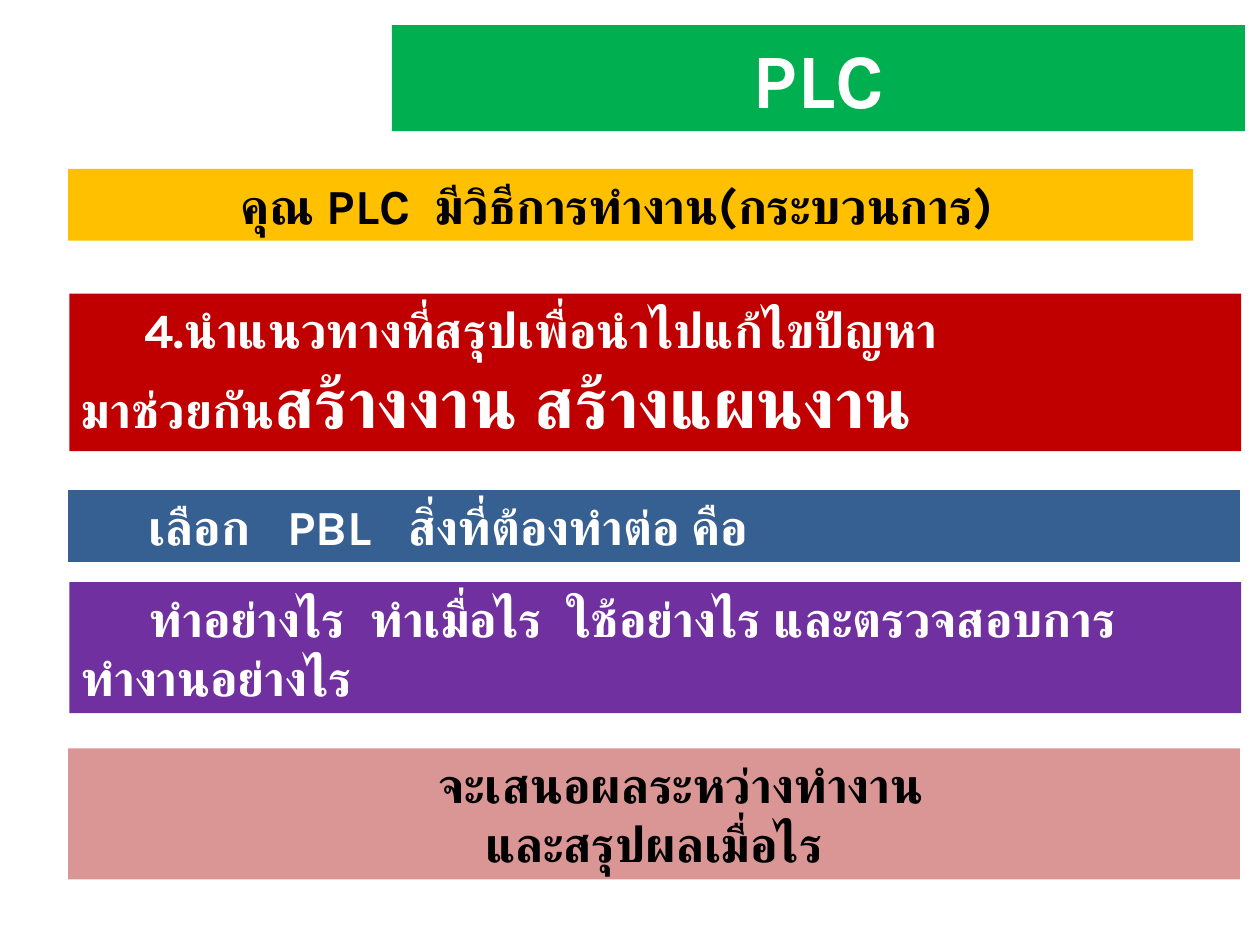
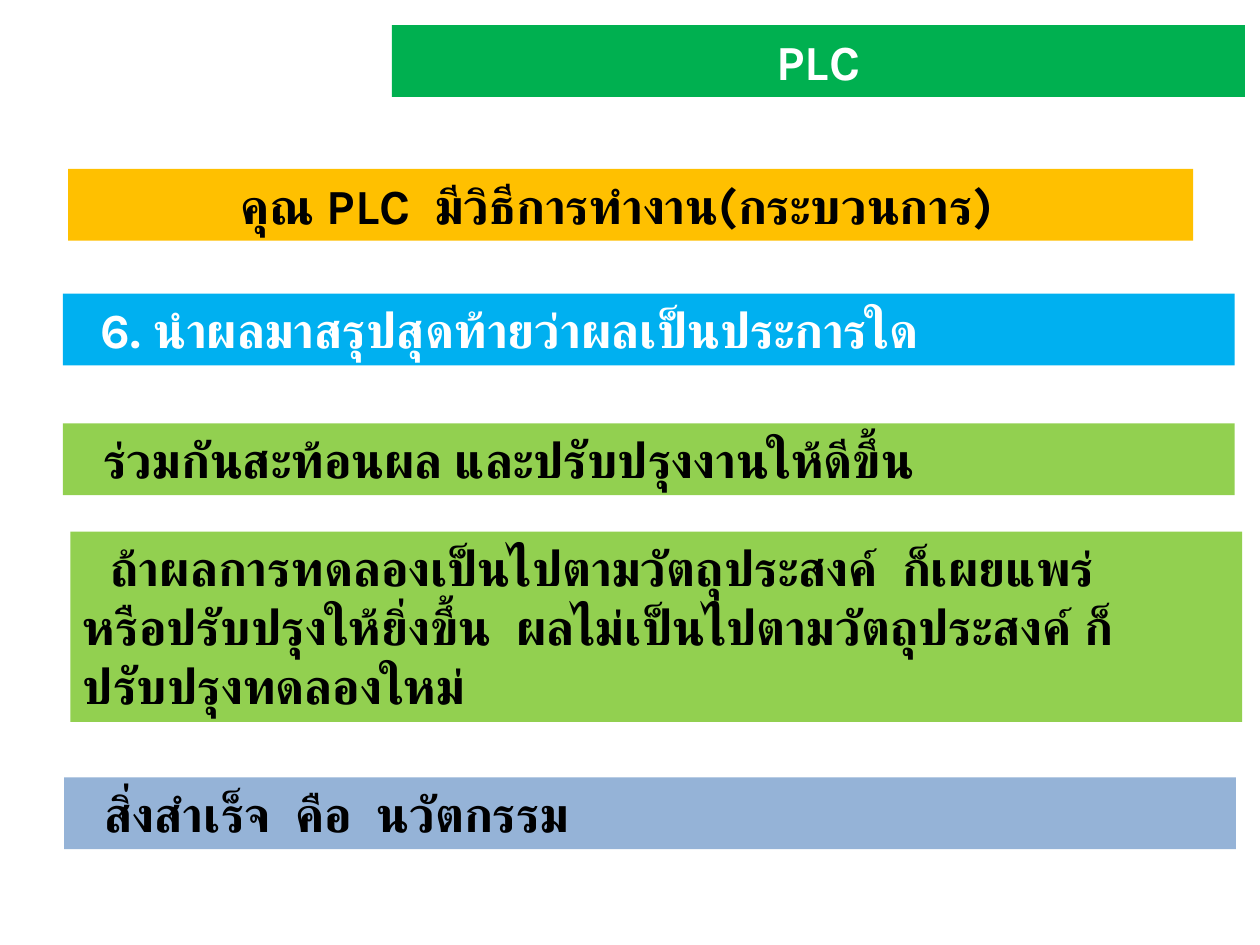
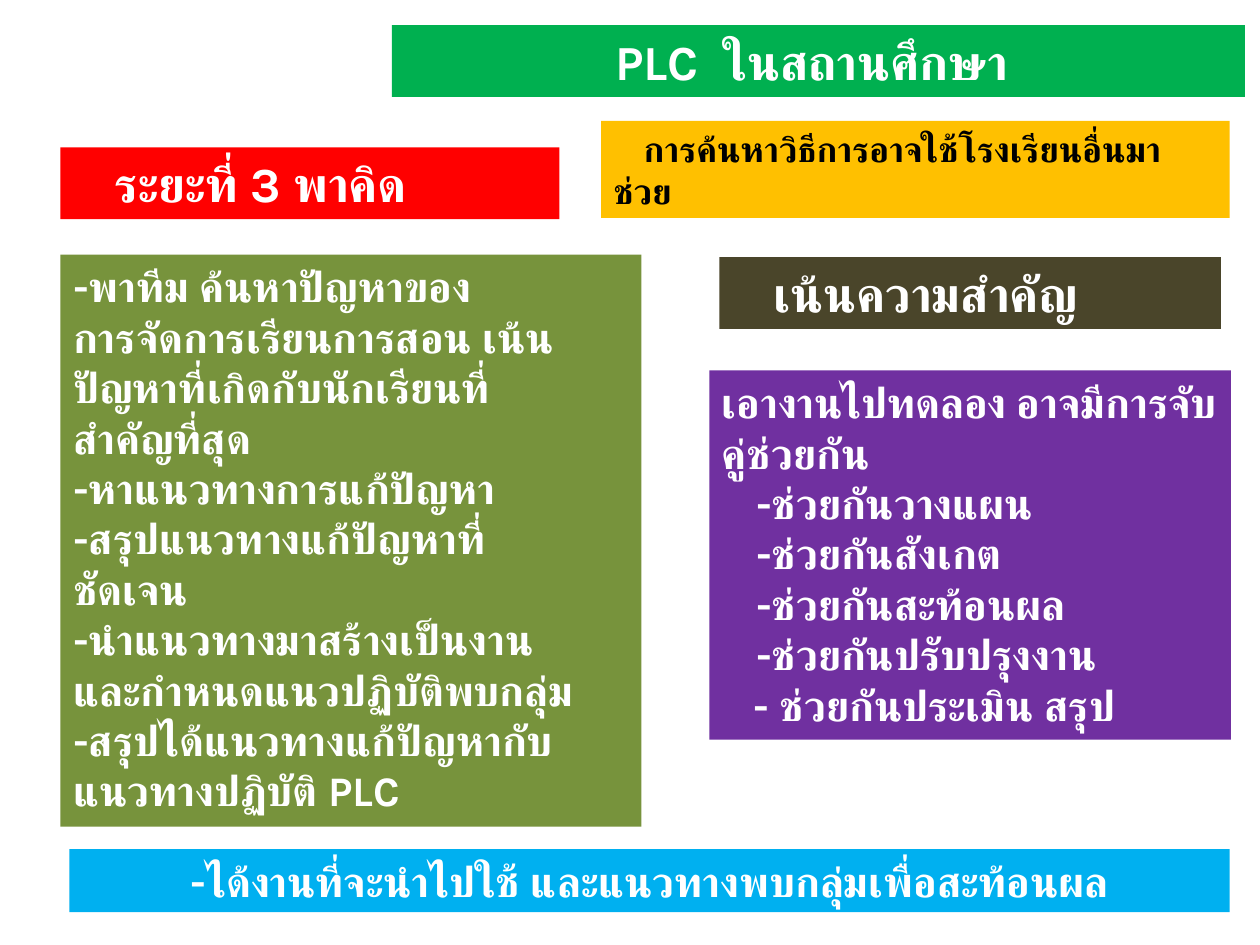
from dataclasses import dataclass

import pptx
import pptx.dml.color
import pptx.enum.lang
import pptx.enum.text
import pptx.util
from lxml import etree
from pptx.util import Inches

RGBColor = pptx.dml.color.RGBColor
WHITE = RGBColor(0xFF, 0xFF, 0xFF)
BLACK = RGBColor(0, 0, 0)
GREEN = RGBColor(0x00, 0xB0, 0x50)
AMBER = RGBColor(0xFF, 0xC0, 0x00)
DARK_RED = RGBColor(0xC0, 0x00, 0x00)
RED = RGBColor(0xFF, 0x00, 0x00)
NAVY = RGBColor(0x37, 0x60, 0x92)
PURPLE = RGBColor(0x70, 0x30, 0xA0)
PINK = RGBColor(0xD9, 0x96, 0x94)
SKY = RGBColor(0x00, 0xB0, 0xF0)
LIME = RGBColor(0x92, 0xD0, 0x50)
PALE_BLUE = RGBColor(0x95, 0xB3, 0xD7)
OLIVE = RGBColor(0x77, 0x93, 0x3C)
BROWN = RGBColor(0x4A, 0x45, 0x2A)

FONT = "Karla"
EMPHASIS_SIZE = 40
DRAWING = "{http://schemas.openxmlformats.org/drawingml/2006/main}"
TITLE_ONLY, TWO_CONTENT = 5, 3
FULL_WIDTH = 9.3
ONE_LINE, TWO_LINES = 0.57, 1.04


@dataclass
class Line:
    """A paragraph; distances are in inches, emphasis is a larger ending."""
    text: str
    indent: float = 0
    left: float = 0
    right: float = 0
    emphasis: str = ""


@dataclass
class Band:
    """A filled block of text; slot is the placeholder that holds it, if any."""
    place: tuple
    fill: RGBColor
    ink: RGBColor
    lines: list
    size: int = 28
    centred: bool = False
    slot: int = None


def title_band(text, height=ONE_LINE, size=28, right=0):
    return Band((3.11, 0.2, 6.77, height), GREEN, WHITE,
                [Line(text, right=right)], size, centred=True, slot=0)


QUESTION = Band((0.54, 1.34, 8.93, ONE_LINE), AMBER, BLACK,
                [Line("คุณ PLC  มีวิธีการทำงาน(กระบวนการ)", right=0.22)], centred=True)

SLIDES = [
    (TITLE_ONLY, [
        title_band("PLC", height=0.84, size=44),
        QUESTION,
        Band((0.55, 2.33, FULL_WIDTH, 1.25), DARK_RED, WHITE, [
            Line("4.นำแนวทางที่สรุปเพื่อนำไปแก้ไขปัญหา\vมาช่วยกัน", indent=0.5,
                 emphasis="สร้างงาน สร้างแผนงาน")]),
        Band((0.54, 3.89, FULL_WIDTH, ONE_LINE), NAVY, WHITE, [
            Line("เลือก   PBL   สิ่งที่ต้องทำต่อ คือ", indent=0.54)]),
        Band((0.55, 4.62, FULL_WIDTH, TWO_LINES), PURPLE, WHITE, [
            Line("ทำอย่างไร  ทำเมื่อไร  ใช้อย่างไร และตรวจสอบการทำงานอย่างไร", indent=0.54)]),
        Band((0.54, 5.94, FULL_WIDTH, TWO_LINES), PINK, BLACK, [
            Line("จะเสนอผลระหว่างทำงาน", left=0.43),
            Line("และสรุปผลเมื่อไร")], centred=True),
    ]),
    (TITLE_ONLY, [
        title_band("PLC"),
        QUESTION,
        Band((0.5, 2.33, FULL_WIDTH, ONE_LINE), SKY, WHITE, [
            Line("6. นำผลมาสรุปสุดท้ายว่าผลเป็นประการใด", indent=0.2)]),
        Band((0.5, 3.36, FULL_WIDTH, ONE_LINE), LIME, BLACK, [
            Line("ร่วมกันสะท้อนผล และปรับปรุงงานให้ดีขึ้น", indent=0.22)]),
        Band((0.56, 4.22, FULL_WIDTH, 1.51), LIME, BLACK, [
            Line("ถ้าผลการทดลองเป็นไปตามวัตถุประสงค์  ก็เผยแพร่", indent=0.22),
            Line("หรือปรับปรุงให้ยิ่งขึ้น  ผลไม่เป็นไปตามวัตถุประสงค์ ก็ปรับปรุงทดลองใหม่")]),
        Band((0.51, 6.17, FULL_WIDTH, ONE_LINE), PALE_BLUE, BLACK, [
            Line("สิ่งสำเร็จ  คือ  นวัตกรรม", indent=0.22)]),
    ]),
    (TWO_CONTENT, [
        title_band("PLC  ในสถานศึกษา", right=0.1),
        Band((0.48, 1.17, 3.96, ONE_LINE), RED, WHITE, [
            Line("ระยะที่ 3 พาคิด", indent=0.33)]),
        Band((0.48, 2.02, 4.61, 4.54), OLIVE, WHITE, [
            Line("-พาทีม ค้นหาปัญหาของ\vการจัดการเรียนการสอน เน้น"
                 "\vปัญหาที่เกิดกับนักเรียนที่\vสำคัญที่สุด"),
            Line("-หาแนวทางการแก้ปัญหา"),
            Line("-สรุปแนวทางแก้ปัญหาที่\vชัดเจน"),
            Line("-นำแนวทางมาสร้างเป็นงาน\vและกำหนดแนวปฏิบัติพบกลุ่ม"),
            Line("-สรุปได้แนวทางแก้ปัญหากับ\vแนวทางปฏิบัติ PLC")], size=24, slot=1),
        Band((5.71, 2.04, 3.98, ONE_LINE), BROWN, WHITE, [
            Line("เน้นความสำคัญ", indent=0.33)]),
        Band((5.63, 2.94, 4.14, 2.93), PURPLE, WHITE, [
            Line("เอางานไปทดลอง อาจมีการจับคู่ช่วยกัน"),
            Line("-ช่วยกันวางแผน", left=0.27),
            Line("-ช่วยกันสังเกต", left=0.27),
            Line("-ช่วยกันสะท้อนผล", left=0.27),
            Line("-ช่วยกันปรับปรุงงาน", left=0.27),
            Line("- ช่วยกันประเมิน สรุป", left=0.25)], size=24, slot=2),
        Band((0.55, 6.74, 9.21, 0.5), SKY, WHITE, [
            Line("-ได้งานที่จะนำไปใช้ และแนวทางพบกลุ่มเพื่อสะท้อนผล")],
            size=24, centred=True),
        Band((4.77, 0.96, 4.99, 0.77), AMBER, BLACK, [
            Line("การค้นหาวิธีการอาจใช้โรงเรียนอื่นมาช่วย", indent=0.24, right=0.1)], size=20),
    ]),
]


def format_span(span, size, ink):
    span.font.name = FONT
    span.font.size = pptx.util.Pt(size)
    span.font.bold = True
    span.font.color.rgb = ink
    span.font.language_id = pptx.enum.lang.MSO_LANGUAGE_ID.THAI
    # Thai letters take the complex-script font
    etree.SubElement(span.font._element, DRAWING + "cs", typeface=FONT)


def write_line(para, line, band):
    para.text = line.text
    align = pptx.enum.text.PP_ALIGN
    para.alignment = align.CENTER if band.centred else align.LEFT
    para.space_before = pptx.util.Pt(0)
    properties = para._p.get_or_add_pPr()
    for name, distance in (("marL", line.left), ("marR", line.right), ("indent", line.indent)):
        properties.set(name, str(Inches(distance)))
    etree.SubElement(properties, DRAWING + "buNone")
    for span in para.runs:
        format_span(span, band.size, band.ink)
    if line.emphasis:
        span = para.add_run()
        span.text = line.emphasis
        format_span(span, EMPHASIS_SIZE, band.ink)


def add_band(slide, band):
    place = [Inches(length) for length in band.place]
    if band.slot is None:
        box = slide.shapes.add_textbox(*place)
    else:
        box = slide.placeholders[band.slot]
        box.left, box.top, box.width, box.height = place
    box.fill.solid()
    box.fill.fore_color.rgb = band.fill
    frame = box.text_frame
    frame.word_wrap = True
    # A fixed size keeps placeholders from growing to their layout's height
    frame.auto_size = pptx.enum.text.MSO_AUTO_SIZE.NONE
    frame.vertical_anchor = pptx.enum.text.MSO_ANCHOR.TOP
    for number, line in enumerate(band.lines):
        para = frame.add_paragraph() if number else frame.paragraphs[0]
        write_line(para, line, band)


def main():
    deck = pptx.Presentation()
    deck.slide_width, deck.slide_height = Inches(10), Inches(7.5)
    for layout, bands in SLIDES:
        slide = deck.slides.add_slide(deck.slide_layouts[layout])
        for band in bands:
            add_band(slide, band)
    deck.save("out.pptx")


if __name__ == "__main__":
    main()
